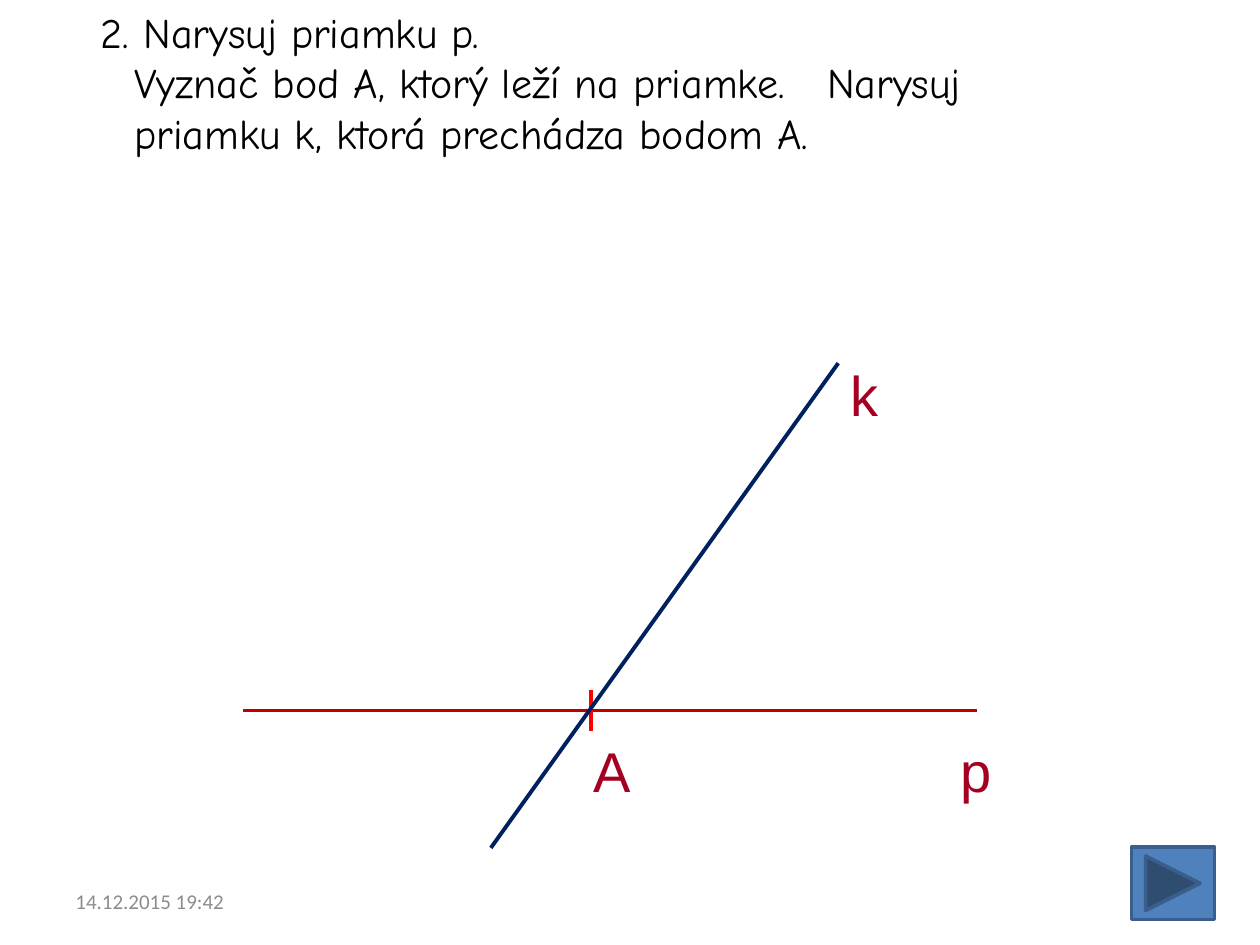
from pptx import Presentation
from pptx.dml.color import RGBColor
from pptx.enum.shapes import MSO_CONNECTOR as Conn, MSO_SHAPE as Kind
from pptx.enum.text import MSO_ANCHOR as Anchor, MSO_AUTO_SIZE as Auto, PP_ALIGN as Align
from pptx.oxml.ns import qn
from pptx.util import Pt
from lxml.etree import SubElement

# Content: lengths in points
TASK = ("2. Narysuj priamku p.\v"
        "Vyznač bod A, ktorý leží na priamke.\tNarysuj\v"
        "priamku k, ktorá prechádza bodom A.")
TASK_BOX = (42.5, 0, 584, 181.5)
GAP_TAB = 470

LINES = [  # start, end, colour
    ((139, 406), (558.5, 406), "C00000"),  # line p
    ((337.5, 394.5), (337.5, 417.5), "FF0000"),  # mark at A
    ((280.5, 484.5), (479, 207.5), "002060"),  # line k
]
LABELS = [  # text, box
    ("p", (541.5, 417.5, 32.5, 46)),
    ("A", (332, 417.5, 36, 46)),
    ("k", (479, 202.5, 31, 46)),
]
DATE = ("14.12.2015 19:42", (36, 500.5, 168, 28.5))
NEXT_BOX = (646.5, 484, 47.5, 41.5)


def rgb(code):
    return RGBColor.from_string(code)


def place(shape, box):
    shape.left, shape.top, shape.width, shape.height = map(Pt, box)


def style(frame, size, face, color):
    for para in frame.paragraphs:
        para.alignment = Align.LEFT
        for run in para.runs:
            run.font.size = Pt(size)
            run.font.name = face
            run.font.color.rgb = rgb(color)


def add_text(text, box, size, face, color, wrap=False, anchor=Anchor.TOP):
    frame = slide.shapes.add_textbox(*map(Pt, box)).text_frame
    frame.text = text
    frame.word_wrap = wrap
    frame.vertical_anchor = anchor
    style(frame, size, face, color)


deck = Presentation()
deck.slide_width, deck.slide_height = Pt(720), Pt(540)
slide = deck.slides.add_slide(deck.slide_layouts[5])

# Task, with a hanging indent and a tab stop
title = slide.shapes.title
place(title, TASK_BOX)
frame = title.text_frame
frame.text = TASK
frame.word_wrap = True
frame.auto_size = Auto.NONE
frame.vertical_anchor = Anchor.TOP
style(frame, 24, "Comic Neue", "000000")
props = frame.paragraphs[0]._p.get_or_add_pPr()
props.set("marL", str(Pt(27)))
props.set("indent", str(Pt(-19)))
tabs = SubElement(props, qn("a:tabLst"))
SubElement(tabs, qn("a:tab"), pos=str(Pt(GAP_TAB)), algn="l")

# Drawing
for start, end, color in LINES:
    line = slide.shapes.add_connector(Conn.STRAIGHT, *map(Pt, start + end))
    line.line.color.rgb = rgb(color)
    line.line.width = Pt(2.25)
    SubElement(line._element.spPr, qn("a:effectLst"))

for text, box in LABELS:
    add_text(text, box, 32, "Arial", "A50021")

# Next button and date
button = slide.shapes.add_shape(Kind.ACTION_BUTTON_FORWARD_OR_NEXT, *map(Pt, NEXT_BOX))
button.shadow.inherit = False
button.fill.solid()
button.fill.fore_color.rgb = rgb("4F81BD")
button.line.color.rgb = rgb("3A5F8C")
button.line.width = Pt(2)

add_text(*DATE, 12, "Calibri", "8C8C8C", wrap=True, anchor=Anchor.MIDDLE)

deck.save("out.pptx")
